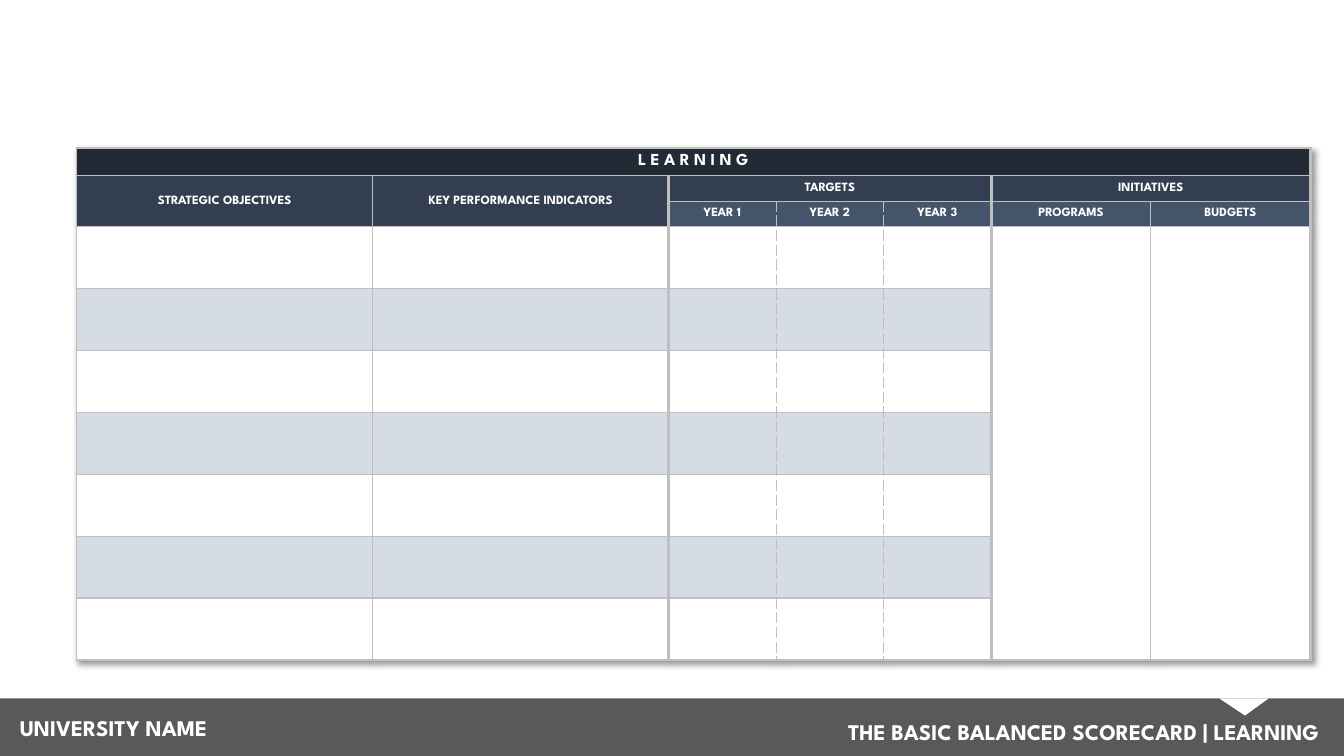
from lxml import etree
from pptx import Presentation
from pptx.dml.color import RGBColor
from pptx.enum.shapes import MSO_SHAPE
from pptx.enum.text import MSO_ANCHOR, MSO_AUTO_SIZE, PP_ALIGN
from pptx.oxml import parse_xml
from pptx.oxml.ns import nsdecls, qn
from pptx.util import Cm, Pt

FONT = "League Spartan"
WHITE = RGBColor(0xFF, 0xFF, 0xFF)
GRAY = RGBColor(0x59, 0x59, 0x59)
LINE = RGBColor(0xBF, 0xBF, 0xBF)
INK = RGBColor(0x22, 0x2A, 0x35)
NAVY = RGBColor(0x33, 0x3F, 0x50)
SLATE = RGBColor(0x44, 0x54, 0x6A)
PALE = RGBColor(0xD6, 0xDC, 0xE5)
BLACK = RGBColor(0, 0, 0)

COLS = [7.46] * 2 + [2.71] * 3 + [4.02] * 2
ROWS = [0.7] + [0.64] * 2 + [1.56] * 7
THICK = {2, 5, 7}  # column edges with a heavy rule
DASHED = {3, 4}  # column edges between the years
NO_STYLE = "{2D5ABB26-0587-4C30-8999-92F81FD0307C}"

# Row, column, row span, column span, text, fill, size
HEADS = [
    (0, 0, 1, 7, "L E A R N I N G", INK, 12),
    (1, 0, 2, 1, "STRATEGIC OBJECTIVES", NAVY, 9),
    (1, 1, 2, 1, "KEY PERFORMANCE INDICATORS", NAVY, 9),
    (1, 2, 1, 3, "TARGETS", NAVY, 9),
    (1, 5, 1, 2, "INITIATIVES", NAVY, 9),
    (2, 2, 1, 1, "YEAR 1", SLATE, 9),
    (2, 3, 1, 1, "YEAR 2", SLATE, 9),
    (2, 4, 1, 1, "YEAR 3", SLATE, 9),
    (2, 5, 1, 1, "PROGRAMS", SLATE, 9),
    (2, 6, 1, 1, "BUDGETS", SLATE, 9),
]


def write(frame, text, size, align):
    para = frame.paragraphs[0]
    para.text = text
    para.alignment = align
    para.font.name = FONT
    para.font.size = Pt(size)
    para.font.bold = True
    para.font.color.rgb = WHITE


def add_block(slide, kind, left, top, width, height, color):
    shape = slide.shapes.add_shape(kind, Cm(left), Cm(top), Cm(width), Cm(height))
    shape.shadow.inherit = False
    shape.fill.solid()
    shape.fill.fore_color.rgb = color
    shape.line.fill.background()
    return shape


def add_label(slide, left, top, text, align):
    box = slide.shapes.add_textbox(Cm(left), Cm(top), Cm(17.22), Cm(0.94))
    box.text_frame.word_wrap = True
    box.text_frame.auto_size = MSO_AUTO_SIZE.SHAPE_TO_FIT_TEXT
    write(box.text_frame, text, 16, align)


def add_rule(cell, side, points, dash="solid"):
    props = cell._tc.get_or_add_tcPr()
    rule = parse_xml(
        f'<a:{side} {nsdecls("a")} w="{Pt(points)}">'
        f'<a:solidFill><a:srgbClr val="{LINE}"/></a:solidFill>'
        f'<a:prstDash val="{dash}"/></a:{side}>'
    )
    props.append(rule)


def edge(col):
    return (2.25 if col in THICK else 1, "sysDash" if col in DASHED else "solid")


def set_cell(table, row, col, high, wide, color):
    cell = table.cell(row, col)
    if high * wide > 1:
        cell.merge(table.cell(row + high - 1, col + wide - 1))
    # Rules come before the fill in the cell properties
    add_rule(cell, "lnL", *edge(col))
    add_rule(cell, "lnR", *edge(col + wide))
    add_rule(cell, "lnT", 1)
    add_rule(cell, "lnB", 2.25 if row + high == len(ROWS) else 1)
    cell.fill.solid()
    cell.fill.fore_color.rgb = color
    return cell


def add_shadow(table):
    props = table._tbl.tblPr
    props.find(qn("a:tableStyleId")).text = NO_STYLE
    effect = etree.Element(qn("a:effectLst"))
    shade = etree.SubElement(
        effect, qn("a:outerShdw"), blurRad=str(Pt(4)), dist=str(Pt(3)),
        dir="2700000", algn="tl", rotWithShape="0")
    tint = etree.SubElement(shade, qn("a:srgbClr"), val=str(BLACK))
    etree.SubElement(tint, qn("a:alpha"), val="40000")
    props.insert(0, effect)


def add_card(slide):
    table = slide.shapes.add_table(
        len(ROWS), len(COLS), Cm(1.93), Cm(3.73), Cm(sum(COLS)), Cm(sum(ROWS))
    ).table
    for col, width in zip(table.columns, COLS):
        col.width = Cm(width)
    for row, height in zip(table.rows, ROWS):
        row.height = Cm(height)
    add_shadow(table)

    # Headings
    for row, col, high, wide, text, color, size in HEADS:
        cell = set_cell(table, row, col, high, wide, color)
        cell.vertical_anchor = MSO_ANCHOR.MIDDLE
        cell.margin_left = cell.margin_right = Cm(0.18)
        cell.margin_top = cell.margin_bottom = 0
        write(cell.text_frame, text, size, PP_ALIGN.CENTER)

    # Striped body, with tall cells for programs and budgets
    for row in range(3, len(ROWS)):
        for col in range(5):
            set_cell(table, row, col, 1, 1, WHITE if row % 2 else PALE)
    for col in (5, 6):
        set_cell(table, 3, col, 7, 1, WHITE)


def main():
    deck = Presentation()
    deck.slide_width = Cm(33.87)
    deck.slide_height = Cm(19.05)
    slide = deck.slides.add_slide(deck.slide_layouts[6])

    # Footer band with its notch
    add_block(slide, MSO_SHAPE.RECTANGLE, 0, 17.6, 33.87, 1.45, GRAY)
    notch = add_block(slide, MSO_SHAPE.ISOSCELES_TRIANGLE, 30.73, 17.6, 1.24, 0.43, WHITE)
    notch.adjustments[0] = 0.48
    notch.rotation = 180
    add_label(slide, 16.28, 17.98, "THE BASIC BALANCED SCORECARD | LEARNING", PP_ALIGN.RIGHT)
    add_label(slide, 0.25, 17.86, "UNIVERSITY NAME", PP_ALIGN.LEFT)

    # Scorecard
    add_card(slide)
    deck.save("out.pptx")


if __name__ == "__main__":
    main()
